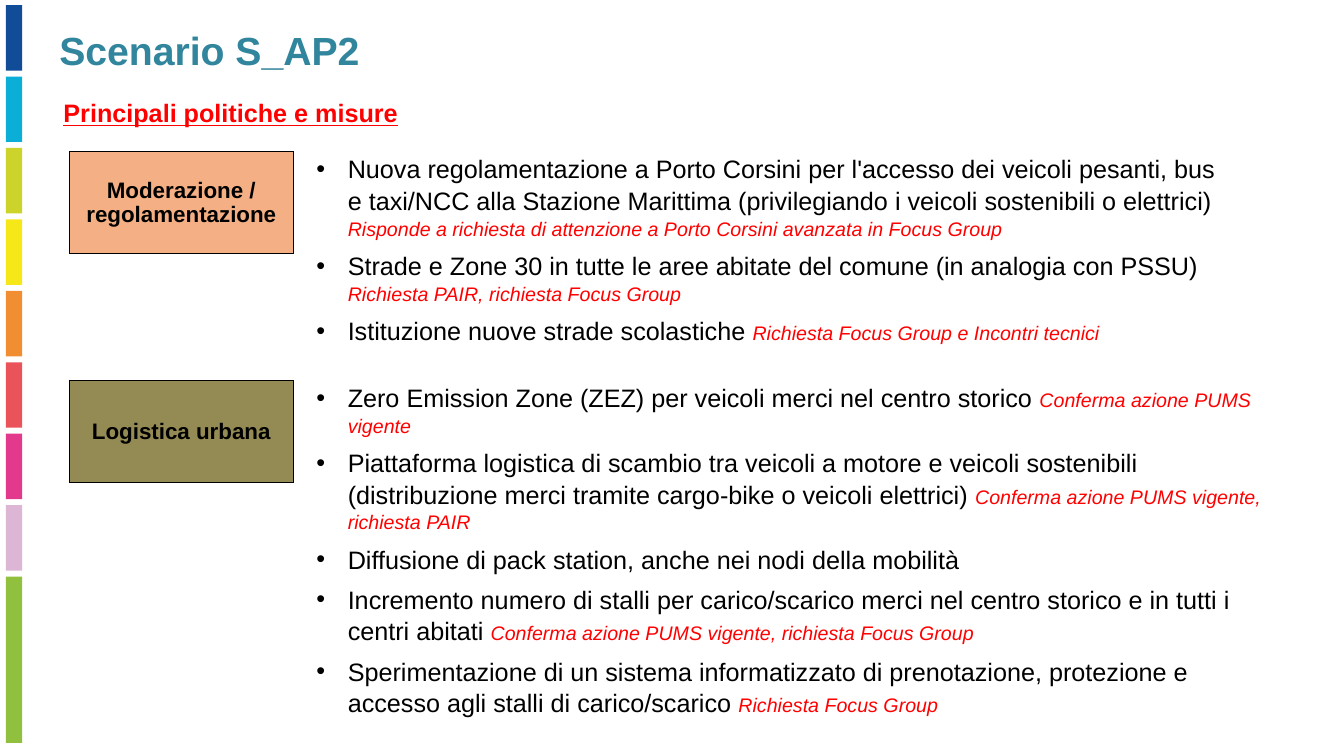
from lxml.etree import SubElement
from pptx import Presentation
from pptx.dml.color import RGBColor
from pptx.enum.shapes import MSO_SHAPE
from pptx.enum.text import MSO_ANCHOR, MSO_AUTO_SIZE, PP_ALIGN
from pptx.oxml import parse_xml
from pptx.oxml.ns import nsdecls, qn
from pptx.util import Cm, Pt

HUES = {
    "text": "000000", "note": "FF0000", "title": "31859C",
    "rules": "F4B084", "freight": "948A54",
}
STRIPS = ["104C98", "0BAED7", "CCD32A", "F6E719", "F28E32",
          "EB535B", "E2398D", "DCB6D4", "90C03E"]

RULES = [
    ("Nuova regolamentazione a Porto Corsini per l'accesso dei veicoli pesanti, "
     "bus e taxi/NCC alla Stazione Marittima (privilegiando i veicoli "
     "sostenibili o elettrici) ",
     "Risponde a richiesta di attenzione a Porto Corsini avanzata in Focus Group"),
    ("Strade e Zone 30 in tutte le aree abitate del comune (in analogia con PSSU) ",
     "Richiesta PAIR, richiesta Focus Group"),
    ("Istituzione nuove strade scolastiche ",
     "Richiesta Focus Group e Incontri tecnici"),
]
FREIGHT = [
    ("Zero Emission Zone (ZEZ) per veicoli merci nel centro storico ",
     "Conferma azione PUMS vigente"),
    ("Piattaforma logistica di scambio tra veicoli a motore e veicoli sostenibili "
     "(distribuzione merci tramite cargo-bike o veicoli elettrici) ",
     "Conferma azione PUMS vigente, richiesta PAIR"),
    ("Diffusione di pack station, anche nei nodi della mobilità", ""),
    ("Incremento numero di stalli per carico/scarico merci nel centro storico "
     "e in tutti i centri abitati ",
     "Conferma azione PUMS vigente, richiesta Focus Group"),
    ("Sperimentazione di un sistema informatizzato di prenotazione, protezione "
     "e accesso agli stalli di carico/scarico ",
     "Richiesta Focus Group"),
]


def write(para, text, size=18, hue="text", bold=False, slant=False, line=False):
    run = para.add_run()
    run.text = text
    font = run.font
    font.name, font.size = "Arial", Pt(size)
    font.bold, font.italic, font.underline = bold, slant, line
    font.color.rgb = RGBColor.from_string(HUES[hue])


def place(shape, left, top, width, height):
    """Move a text shape (cm) and give it plain, wrapped, top-set text."""
    shape.left, shape.top = Cm(left), Cm(top)
    shape.width, shape.height = Cm(width), Cm(height)
    frame = shape.text_frame
    frame.word_wrap = True
    frame.auto_size = MSO_AUTO_SIZE.NONE
    frame.vertical_anchor = MSO_ANCHOR.TOP
    return frame


def add_strips(slide):
    for i, hue in enumerate(STRIPS):
        tall = 4.19 if i == len(STRIPS) - 1 else 1.65
        strip = slide.shapes.add_shape(
            MSO_SHAPE.RECTANGLE, Cm(0.15), Cm(0.13 + 1.8 * i), Cm(0.41), Cm(tall))
        strip.shadow.inherit = False
        strip.fill.solid()
        strip.fill.fore_color.rgb = RGBColor.from_string(hue)
        strip.line.fill.background()


def add_border(cell):
    props = cell._tc.get_or_add_tcPr()
    for i, side in enumerate("LRTB"):
        props.insert(i, parse_xml(
            f'<a:ln{side} {nsdecls("a")} w="6350"><a:solidFill>'
            f'<a:srgbClr val="{HUES["text"]}"/></a:solidFill></a:ln{side}>'))


def add_label(slide, text, top, hue):
    """Add a one-cell table that names a group of measures."""
    table = slide.shapes.add_table(
        1, 1, Cm(1.75), Cm(top), Cm(5.64), Cm(2.58)).table
    table.first_row = table.horz_banding = False
    cell = table.cell(0, 0)
    cell.fill.solid()
    cell.fill.fore_color.rgb = RGBColor.from_string(HUES[hue])
    add_border(cell)
    cell.margin_left = cell.margin_right = cell.margin_top = Cm(0.02)
    cell.margin_bottom = 0
    cell.vertical_anchor = MSO_ANCHOR.MIDDLE
    para = cell.text_frame.paragraphs[0]
    para.alignment = PP_ALIGN.CENTER
    write(para, text, size=16, bold=True)


def add_bullet(para):
    props = para._p.get_or_add_pPr()
    props.set("marL", str(Cm(0.79)))
    props.set("indent", str(-Cm(0.79)))
    SubElement(props, qn("a:buFont")).set("typeface", "Arial")
    SubElement(props, qn("a:buChar")).set("char", "•")


def fill_list(frame, items):
    for i, (text, note) in enumerate(items):
        para = frame.add_paragraph() if i else frame.paragraphs[0]
        add_bullet(para)
        para.line_spacing = 1.05
        para.space_before = Pt(3 if i else 0)
        para.space_after = Pt(3)
        write(para, text)
        if note:
            write(para, note, size=14, hue="note", slant=True)


def main():
    deck = Presentation()
    deck.slide_width, deck.slide_height = Cm(33.87), Cm(19.05)
    slide = deck.slides.add_slide(deck.slide_layouts.get_by_name("Two Content"))
    title, upper, lower = slide.placeholders

    add_strips(slide)
    para = place(title, 1.24, 0.53, 29.9, 1.45).paragraphs[0]
    para.alignment = PP_ALIGN.LEFT
    write(para, "Scenario S_AP2", size=28, hue="title", bold=True)

    head = slide.shapes.add_textbox(0, 0, 0, 0)
    para = place(head, 1.35, 2.34, 31.78, 1.02).paragraphs[0]
    write(para, "Principali politiche e misure", hue="note", bold=True, line=True)

    add_label(slide, "Moderazione / regolamentazione", 3.81, "rules")
    fill_list(place(upper, 7.72, 3.71, 23.6, 5.13), RULES)
    add_label(slide, "Logistica urbana", 9.58, "freight")
    fill_list(place(lower, 7.72, 9.47, 24.36, 8.46), FREIGHT)
    deck.save("out.pptx")


if __name__ == "__main__":
    main()
